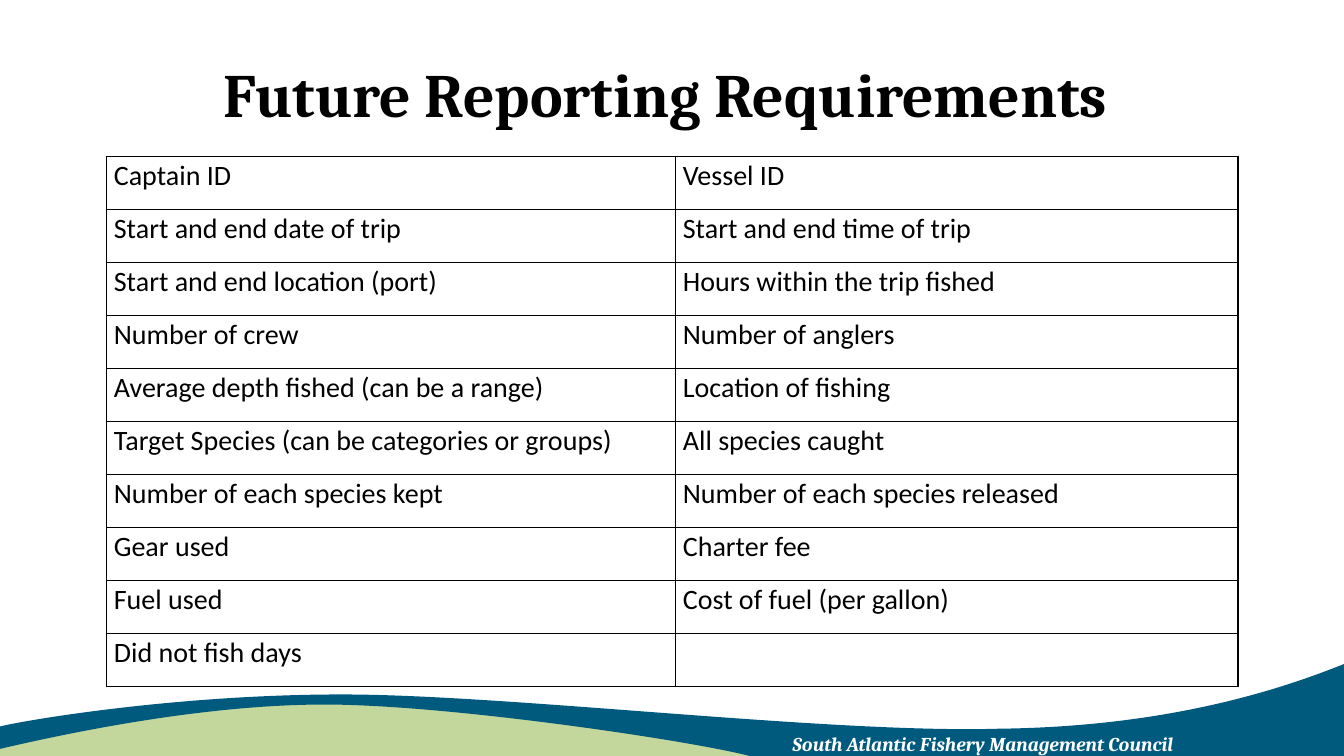
from lxml.etree import SubElement
from pptx import Presentation
from pptx.dml.color import RGBColor
from pptx.enum.text import MSO_ANCHOR as Anchor, MSO_AUTO_SIZE as AutoSize, PP_ALIGN as Align
from pptx.oxml.ns import qn
from pptx.util import Inches, Pt

WIDTH, HEIGHT = 13.33, 7.5
REQUIREMENTS = [
    ("Captain ID", "Vessel ID"),
    ("Start and end date of trip", "Start and end time of trip"),
    ("Start and end location (port)", "Hours within the trip fished"),
    ("Number of crew", "Number of anglers"),
    ("Average depth fished (can be a range)", "Location of fishing"),
    ("Target Species (can be categories or groups)", "All species caught"),
    ("Number of each species kept", "Number of each species released"),
    ("Gear used", "Charter fee"),
    ("Fuel used", "Cost of fuel (per gallon)"),
    ("Did not fish days", ""),
]
TITLE_FONT = dict(name="Cambria", size=Pt(44), bold=True)
CELL_FONT = dict(name="Calibri", size=Pt(20))
FOOTER_FONT = dict(name="Cambria", size=Pt(14), bold=True, italic=True)

# Outlines in inches from the footer's corner: one point is a line, three a curve
GREEN_WAVE = [
    [(7.56, 0.93)],
    [(7.12, 0.83), (4.62, 0.4), (3.36, 0.37)],
    [(2.1, 0.34), (0.56, 0.65), (0, 0.75)],
    [(0, 0.92)],
]
BLUE_WAVE = [
    [(13.34, 0.93)],
    [(7.47, 0.93)],
    [(6.99, 0.79), (4.49, 0.41), (3.22, 0.41)],
    [(1.96, 0.41), (0.56, 0.72), (0, 0.85)],
    [(-0.01, 0.63)],
    [(0.22, 0.57), (1.74, 0.31), (3.39, 0.31)],
    [(5.04, 0.31), (8.25, 0.7), (9.91, 0.65)],
    [(11.61, 0.63), (12.73, 0.25), (13.35, 0)],
]


def color(value):
    return RGBColor.from_string(value)


def add_span(para, text, font, ink):
    span = para.add_run()
    span.text = text
    for name, value in font.items():
        setattr(span.font, name, value)
    span.font.color.rgb = color(ink)


def add_text(page, box, text, font, ink, **layout):
    frame = page.shapes.add_textbox(*map(Inches, box)).text_frame
    frame.word_wrap = True
    para = frame.paragraphs[0]
    para.alignment = layout.pop("alignment", None)
    for name, value in layout.items():
        setattr(frame, name, value)
    add_span(para, text, font, ink)


def bend_outline(wave, segments):
    """Join the straight steps of each three-point segment into one cubic curve."""
    steps = list(wave._element.iter(qn("a:lnTo")))
    for segment in segments[1:]:
        group, steps = steps[:len(segment)], steps[len(segment):]
        if len(group) == 3:
            curve = group[0]
            curve.addprevious(bend := SubElement(curve.getparent(), qn("a:cubicBezTo")))
            for step in group:
                bend.append(step[0])
                step.getparent().remove(step)


def add_wave(page, left, top, segments, fill):
    points = [(Inches(left + x), Inches(top + y)) for segment in segments for x, y in segment]
    builder = page.shapes.build_freeform(*points[0])
    builder.add_line_segments(points[1:])
    wave = builder.convert_to_shape()
    bend_outline(wave, segments)
    wave.shadow.inherit = False
    wave.fill.solid()
    wave.fill.fore_color.rgb = color(fill)
    wave.line.fill.background()


def add_footer(page, left, top, width):
    add_wave(page, left, top, GREEN_WAVE, "C3D69B")
    add_wave(page, left, top, BLUE_WAVE, "005A7E")
    add_text(page, (left + 7.76, top + 0.63, width - 7.8, 0.34),
             "South Atlantic Fishery Management Council",
             FOOTER_FONT, "FFFFFF", auto_size=AutoSize.SHAPE_TO_FIT_TEXT)


def add_borders(cell):
    properties = cell._tc.get_or_add_tcPr()
    for position, side in enumerate(("lnL", "lnR", "lnT", "lnB")):
        line = SubElement(properties, qn(f"a:{side}"), w=str(Pt(1)))
        fill = SubElement(line, qn("a:solidFill"))
        SubElement(fill, qn("a:srgbClr"), val="000000")
        properties.insert(position, line)


def add_requirements(page, left, top, width, height):
    rows = len(REQUIREMENTS)
    table = page.shapes.add_table(rows, 2, *map(Inches, (left, top, width, height))).table
    table.first_row = table.horz_banding = False
    for column, share in zip(table.columns, (0.503, 0.497)):
        column.width = Inches(width * share)
    for row, texts in zip(table.rows, REQUIREMENTS):
        row.height = Inches(height / rows)
        for cell, text in zip(row.cells, texts):
            cell.fill.background()
            add_borders(cell)
            cell.margin_left = cell.margin_right = Inches(0.07)
            cell.margin_top = cell.margin_bottom = 0
            if text:
                para = cell.text_frame.paragraphs[0]
                para.line_spacing = 1.07
                add_span(para, text, CELL_FONT, "000000")


def main():
    deck = Presentation()
    deck.slide_width, deck.slide_height = Inches(WIDTH), Inches(HEIGHT)
    page = deck.slides.add_slide(deck.slide_layouts[6])
    add_footer(page, 0, 6.58, WIDTH)
    # The trailing space is part of the centred title
    add_text(page, (0.67, 0.3, 12, 1.25), "Future Reporting Requirements ",
             TITLE_FONT, "000000", alignment=Align.CENTER, vertical_anchor=Anchor.MIDDLE)
    add_requirements(page, 1.06, 1.55, 11.22, 5.26)
    deck.save("out.pptx")


if __name__ == "__main__":
    main()
